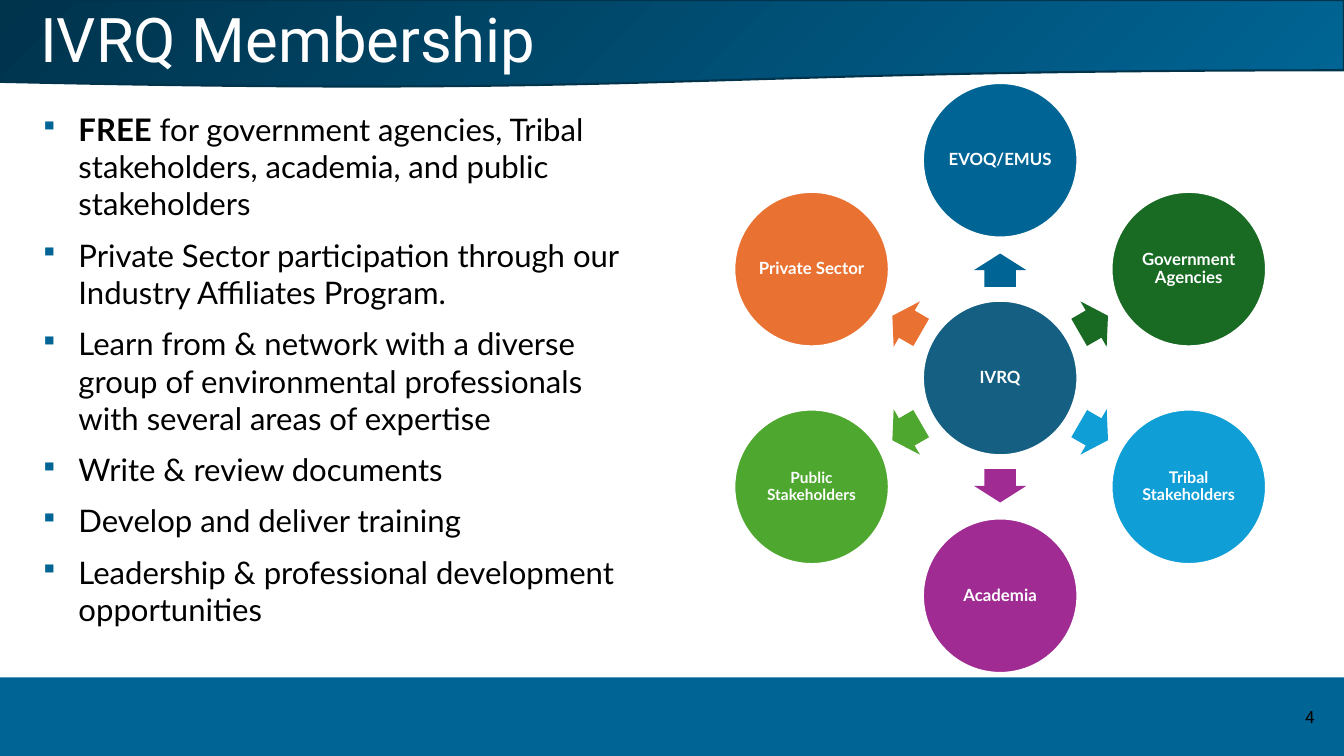
from math import cos, radians, sin

from lxml import etree
from pptx import Presentation
from pptx import util as u
from pptx.dml.color import RGBColor
from pptx.enum import shapes, text
from pptx.oxml import ns

NAVY = RGBColor(0x00, 0x33, 0x4C)
BLUE = RGBColor(0x00, 0x65, 0x95)
TEAL = RGBColor(0x15, 0x60, 0x82)
GREEN = RGBColor(0x19, 0x6B, 0x24)
SKY = RGBColor(0x0F, 0x9E, 0xD5)
PLUM = RGBColor(0xA0, 0x2B, 0x93)
LIME = RGBColor(0x4E, 0xA7, 0x2E)
ORANGE = RGBColor(0xE9, 0x71, 0x32)
WHITE = RGBColor(0xFF, 0xFF, 0xFF)
BLACK = RGBColor(0x00, 0x00, 0x00)

SHAPE = shapes.MSO_SHAPE
ALIGN = text.PP_ALIGN

# Bullets: each is a list of (words, bold) runs
POINTS = [
    [("FREE", True), (" for government agencies, Tribal stakeholders, "
                      "academia, and public stakeholders", False)],
    [("Private Sector participation through our Industry Affiliates Program.", False)],
    [("Learn from & network with a diverse group of environmental "
      "professionals with several areas of expertise", False)],
    [("Write & review documents", False)],
    [("Develop and deliver training", False)],
    [("Leadership & professional development opportunities", False)],
]

# Members clockwise from the top: label, colour, text size
MEMBERS = [
    ("EVOQ/EMUS", BLUE, 12),
    ("Government Agencies", GREEN, 12),
    ("Tribal Stakeholders", SKY, 11.5),
    ("Academia", PLUM, 12),
    ("Public Stakeholders", LIME, 11),
    ("Private Sector", ORANGE, 12),
]


def mark(para):
    """Give a paragraph a small square bullet with a hanging indent."""
    props = para._p.get_or_add_pPr()
    props.set("marL", str(u.Inches(0.38)))
    props.set("indent", str(-u.Inches(0.38)))
    tint = etree.SubElement(props, ns.qn("a:buClr"))
    etree.SubElement(tint, ns.qn("a:srgbClr"), val=str(BLUE))
    etree.SubElement(props, ns.qn("a:buSzPct"), val="80000")
    etree.SubElement(props, ns.qn("a:buChar"), char="▪")


def write(frame, paras, size=12, font="Lato", color=WHITE, align=ALIGN.LEFT,
          inset=(0.1, 0.05), line=None, gap=0, bullet=False):
    """Fill a text frame with paragraphs made of (words, bold) runs."""
    frame.word_wrap = True
    frame.vertical_anchor = text.MSO_ANCHOR.MIDDLE
    frame.margin_left = frame.margin_right = u.Inches(inset[0])
    frame.margin_top = frame.margin_bottom = u.Inches(inset[1])
    for i, runs in enumerate(paras):
        para = frame.add_paragraph() if i else frame.paragraphs[0]
        if bullet:
            mark(para)
        para.alignment = align
        if line:
            para.line_spacing = line
        if i:
            para.space_before = u.Pt(gap)
        for words, bold in runs:
            run = para.add_run()
            run.text = words
            run.font.size = u.Pt(size)
            run.font.name = font
            run.font.bold = bold
            run.font.color.rgb = color


class Deck:
    def __init__(self):
        self.pres = Presentation()
        self.pres.slide_width = u.Inches(13.33)
        self.pres.slide_height = u.Inches(7.5)
        self.slide = self.pres.slides.add_slide(self.pres.slide_layouts[6])

    def shape(self, kind, x, y, w, h, fill=None, line=None, width=1):
        item = self.slide.shapes.add_shape(
            kind, u.Inches(x), u.Inches(y), u.Inches(w), u.Inches(h))
        item.shadow.inherit = False
        if fill is not None:
            item.fill.solid()
            item.fill.fore_color.rgb = fill
        if line is None:
            item.line.fill.background()
        else:
            item.line.color.rgb = line
            item.line.width = u.Pt(width)
        return item

    def banner(self, x, y, w, h):
        item = self.shape(SHAPE.FLOWCHART_DOCUMENT, x, y, w, h, line=NAVY, width=1.5)
        item.fill.gradient()
        item.fill.gradient_angle = 315
        for stop, (place, color) in zip(item.fill.gradient_stops, [(0, NAVY), (1, BLUE)]):
            stop.position = place
            stop.color.rgb = color

    def label(self, x, y, w, h, paras, **style):
        box = self.slide.shapes.add_textbox(
            u.Inches(x), u.Inches(y), u.Inches(w), u.Inches(h))
        write(box.text_frame, paras, **style)

    def circle(self, x, y, name, color, size=12, side=1.54):
        item = self.shape(SHAPE.OVAL, x - side / 2, y - side / 2, side, side,
                          fill=color, line=WHITE, width=2)
        write(item.text_frame, [[(name, True)]], size=size, align=ALIGN.CENTER,
              inset=(0.02, 0.02), line=0.9)

    def arrow(self, x, y, angle, color, w=0.33, h=0.52):
        item = self.shape(SHAPE.RIGHT_ARROW, x - w / 2, y - h / 2, w, h, fill=color)
        item.adjustments[0] = 0.6
        item.adjustments[1] = 0.5
        item.rotation = angle % 360

    def wheel(self, x, y, reach, mid):
        """Hub with members around it, and arrows pointing outwards."""
        self.circle(x, y, "IVRQ", TEAL)
        for i, (name, color, size) in enumerate(MEMBERS):
            angle = i * 360 / len(MEMBERS) - 90
            dx, dy = cos(radians(angle)), sin(radians(angle))
            self.arrow(x + mid * dx, y + mid * dy, angle, color)
            self.circle(x + reach * dx, y + reach * dy, name, color, size)


def main():
    deck = Deck()
    # Header and footer bands
    deck.banner(0, 0, 13.33, 0.87)
    deck.shape(SHAPE.RECTANGLE, 0, 6.72, 13.33, 0.78, fill=BLUE)
    deck.label(12.73, 6.89, 0.52, 0.44, [[("4", False)]],
               font="Roboto", color=BLACK, align=ALIGN.CENTER)
    # Title and bullets
    deck.label(0.3, 0.04, 12.8, 0.77, [[("IVRQ Membership", False)]],
               size=44, font="Roboto", line=0.9)
    deck.label(0.3, 1.27, 6.18, 4.78, POINTS,
               size=22.2, color=BLACK, gap=10, bullet=True)
    # Membership wheel
    deck.wheel(9.92, 3.75, reach=2.16, mid=1.07)
    deck.pres.save("out.pptx")


if __name__ == "__main__":
    main()
